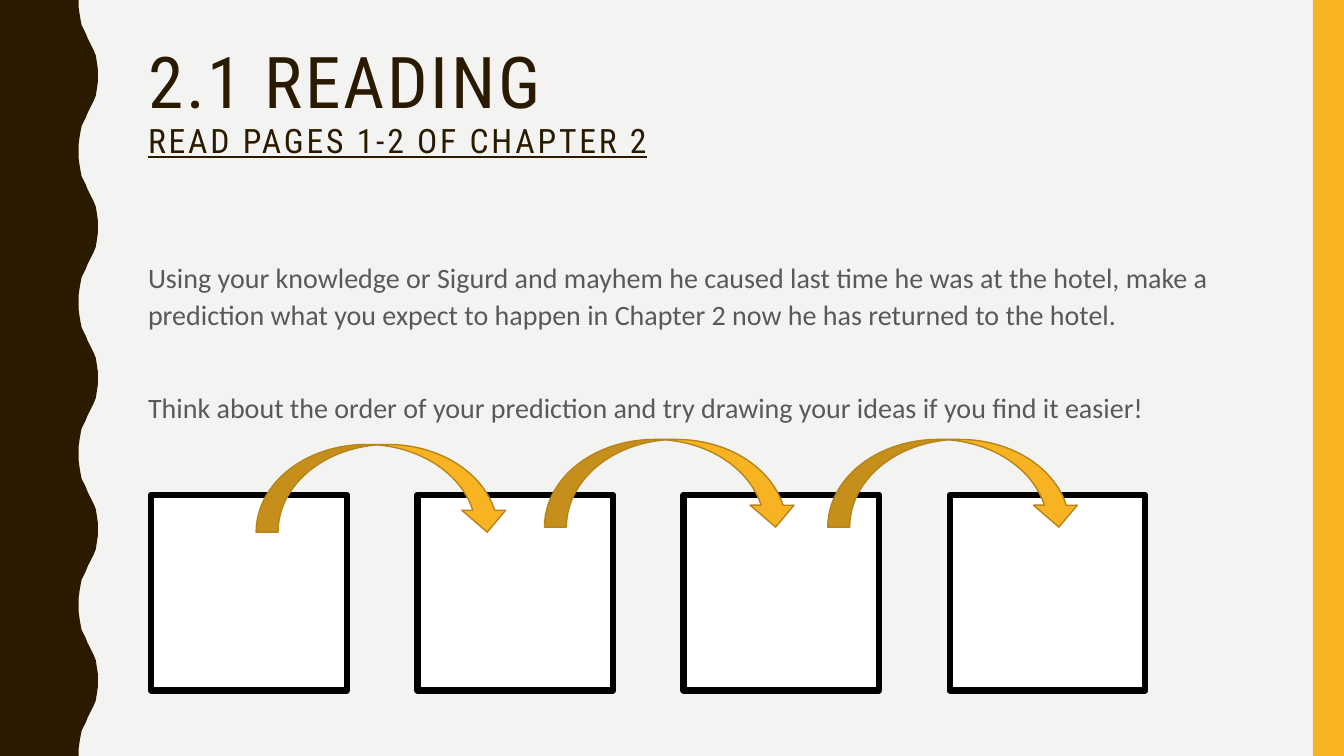
from lxml.etree import SubElement
from pptx import Presentation
from pptx.dml.color import RGBColor
from pptx.enum.shapes import MSO_SHAPE
from pptx.enum.text import MSO_ANCHOR
from pptx.util import Inches, Pt

COLORS = {
    "background": "F3F3F2",
    "brown": "2A1A00",
    "gold": "F8B323",
    "dark_gold": "B7841A",
    "gray": "595959",
    "white": "FFFFFF",
    "black": "000000",
}

# Half of one wave on the left band, as (x, y); the other half mirrors it
HALF_WAVE = [
    (0.78, 0), (0.78, 0.07), (0.79, 0.14), (0.8, 0.2), (0.81, 0.25),
    (0.83, 0.29), (0.85, 0.33), (0.87, 0.38), (0.89, 0.42), (0.91, 0.46),
    (0.93, 0.5), (0.95, 0.55), (0.96, 0.61), (0.97, 0.68), (0.97, 0.75),
]
WAVE_HEIGHT = 1.5
WAVE_COUNT = 5


def color(name):
    return RGBColor.from_string(COLORS[name])


def paint(s, fill, line=None, width=0):
    s.shadow.inherit = False
    s.fill.solid()
    s.fill.fore_color.rgb = color(fill)
    if line:
        s.line.color.rgb = color(line)
        s.line.width = Pt(width)
    else:
        s.line.fill.background()


def add_preset(slide, kind, x, y, w, h, fill, line=None, width=0):
    s = slide.shapes.add_shape(kind, Inches(x), Inches(y), Inches(w), Inches(h))
    paint(s, fill, line, width)


def add_wavy_band(slide):
    wave = HALF_WAVE + [(x, WAVE_HEIGHT - y) for x, y in HALF_WAVE[-2::-1]]
    edge = [(x, y + i * WAVE_HEIGHT) for i in range(WAVE_COUNT) for x, y in wave]
    points = edge + [(0, WAVE_COUNT * WAVE_HEIGHT)]
    builder = slide.shapes.build_freeform(0, 0)
    builder.add_line_segments([(Inches(x), Inches(y)) for x, y in points])
    paint(builder.convert_to_shape(), "brown")


def add_text_frame(slide, x, y, w, h, text):
    tf = slide.shapes.add_textbox(Inches(x), Inches(y), Inches(w), Inches(h)).text_frame
    tf.word_wrap = True
    tf.vertical_anchor = MSO_ANCHOR.TOP
    tf.text = text
    return tf


def format_run(r, font, size, color_name):
    r.font.name = font
    r.font.size = Pt(size)
    r.font.color.rgb = color(color_name)


def add_title(slide):
    tf = add_text_frame(slide, 1.37, 0.42, 11.13, 1.63,
                        "2.1 READING\vREAD PAGES 1-2 OF CHAPTER 2")
    p = tf.paragraphs[0]
    p.line_spacing = 0.9
    for r, size in zip(p.runs, (51, 24)):
        format_run(r, "Roboto Condensed", size, "brown")
        r.font._element.set("spc", "200")
    p.runs[1].font.underline = True
    # The line break takes the size of the heading line
    for br in p._p.findall("{*}br"):
        ns = br.tag.split("}")[0] + "}"
        SubElement(br, ns + "rPr").set("sz", "5100")


def add_instructions(slide):
    tf = add_text_frame(
        slide, 1.37, 2.5, 11.13, 4.6,
        "Using your knowledge or Sigurd and mayhem he caused last time he was "
        "at the hotel, make a prediction what you expect to happen in Chapter 2 "
        "now he has returned to the hotel.\n"
        "Think about the order of your prediction and try drawing your ideas "
        "if you find it easier!")
    for p, space in zip(tf.paragraphs, (7, 40)):
        p.line_spacing = 1.1
        p.space_before = Pt(space)
        format_run(p.runs[0], "Calibri", 20, "gray")


def main():
    prs = Presentation()
    prs.slide_width, prs.slide_height = Inches(13.33), Inches(7.5)
    slide = prs.slides.add_slide(prs.slide_layouts[6])
    slide.background.fill.solid()
    slide.background.fill.fore_color.rgb = color("background")

    # Side bands
    add_wavy_band(slide)
    add_preset(slide, MSO_SHAPE.RECTANGLE, 13.02, 0, 0.31, 7.5, "gold")

    # Text
    add_title(slide)
    add_instructions(slide)

    # Drawing boxes in a row
    for i in range(4):
        add_preset(slide, MSO_SHAPE.RECTANGLE, 1.5 + i * 2.64, 4.91, 1.94, 1.94,
                   "white", "black", 4.5)

    # Arrows from box to box
    for x, y in ((2.54, 4.41), (5.4, 4.36), (8.21, 4.36)):
        add_preset(slide, MSO_SHAPE.CURVED_DOWN_ARROW, x, y, 2.51, 0.87,
                   "gold", "dark_gold", 1)

    prs.save("out.pptx")


if __name__ == "__main__":
    main()
